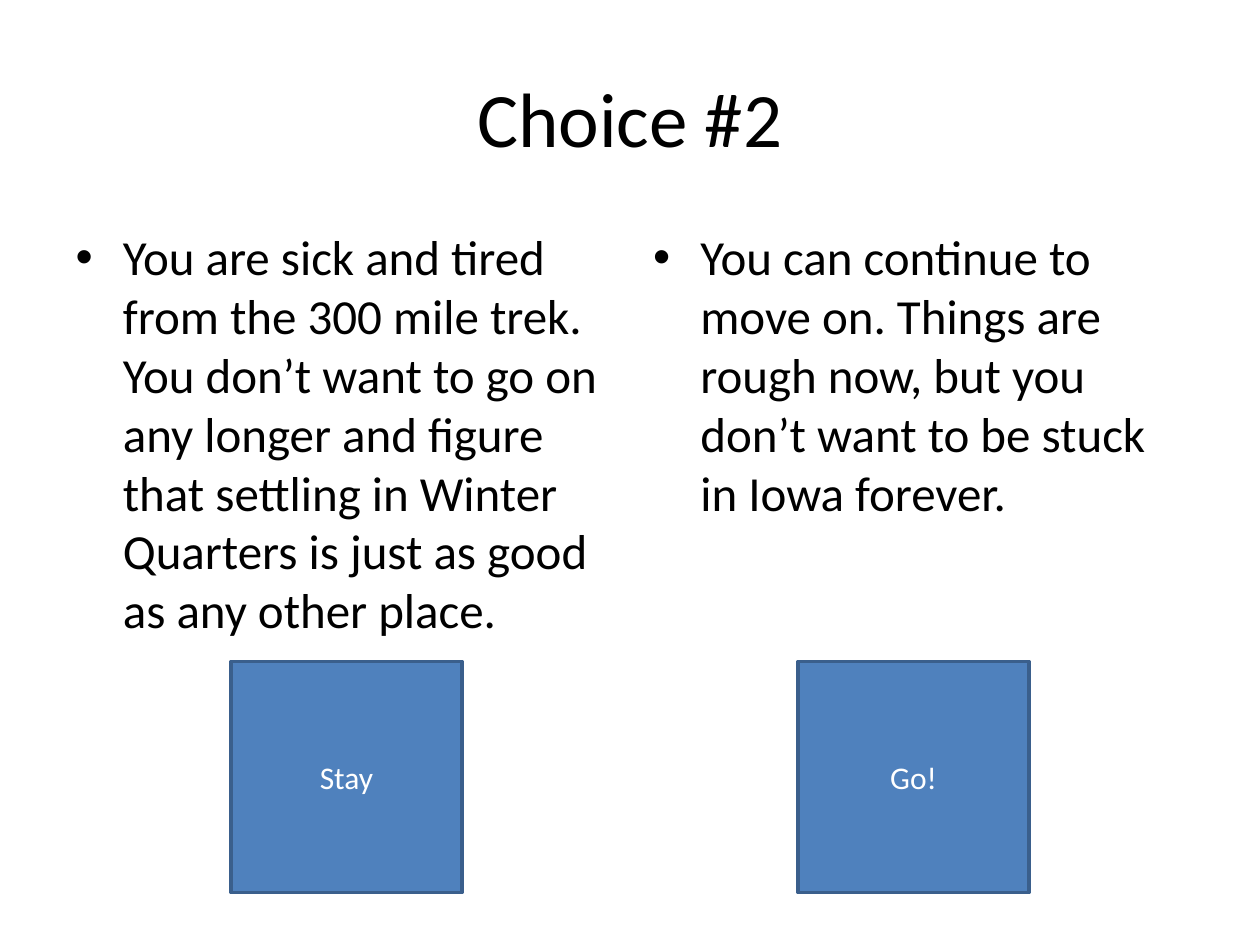
from pptx import Presentation
from pptx import util as u
from pptx.dml.color import RGBColor
from pptx.enum import shapes, text

BLACK = RGBColor(0x00, 0x00, 0x00)
WHITE = RGBColor(0xFF, 0xFF, 0xFF)
BLUE = RGBColor(0x4F, 0x81, 0xBD)
DARK_BLUE = RGBColor(0x3A, 0x5F, 0x8C)

TWO_CONTENT = 3  # layout with a title and two lists


class ChoiceSlide:
    """Holds the text style and the current slide."""

    font = "Calibri"

    def __init__(self, page):
        self.page = page

    def place(self, box, left, top, width, height):
        box.left, box.top = u.Pt(left), u.Pt(top)
        box.width, box.height = u.Pt(width), u.Pt(height)

    def set_words(self, box, words, size, color, align=None):
        box.text_frame.text = words
        para = box.text_frame.paragraphs[0]
        para.alignment = align
        span = para.runs[0]
        span.font.name = self.font
        span.font.size = u.Pt(size)
        span.font.color.rgb = color

    def title(self, words, *area):
        box = self.page.shapes.title
        self.place(box, *area)
        box.text_frame.vertical_anchor = text.MSO_ANCHOR.MIDDLE
        self.set_words(box, words, 44, BLACK, text.PP_ALIGN.CENTER)

    def body(self, number, words, *area):
        box = self.page.placeholders[number]
        self.place(box, *area)
        self.set_words(box, words, 28, BLACK)

    def button(self, words, left, top, side):
        box = self.page.shapes.add_shape(
            shapes.MSO_SHAPE.ACTION_BUTTON_CUSTOM,
            u.Pt(left), u.Pt(top), u.Pt(side), u.Pt(side))
        box.shadow.inherit = False
        box.fill.solid()
        box.fill.fore_color.rgb = BLUE
        box.line.color.rgb = DARK_BLUE
        box.line.width = u.Pt(2)
        box.text_frame.vertical_anchor = text.MSO_ANCHOR.MIDDLE
        self.set_words(box, words, 18, WHITE, text.PP_ALIGN.CENTER)


def main():
    deck = Presentation()
    deck.slide_width, deck.slide_height = u.Pt(720), u.Pt(540)
    slide = ChoiceSlide(deck.slides.add_slide(deck.slide_layouts[TWO_CONTENT]))

    # Title
    slide.title("Choice #2", 36, 21.6, 648, 90)

    # The two options, one per column
    options = [
        "You are sick and tired from the 300 mile trek. You don’t want to go on "
        "any longer and figure that settling in Winter Quarters is just as good "
        "as any other place.",
        "You can continue to move on. Things are rough now, but you don’t want "
        "to be stuck in Iowa forever.",
    ]
    for column, words in enumerate(options):
        slide.body(column + 1, words, 36 + 330 * column, 126, 318, 356.4)

    # A button under each option
    for column, label in enumerate(["Stay", "Go!"]):
        slide.button(label, 132 + 324 * column, 378, 132)

    deck.save("out.pptx")


if __name__ == "__main__":
    main()
